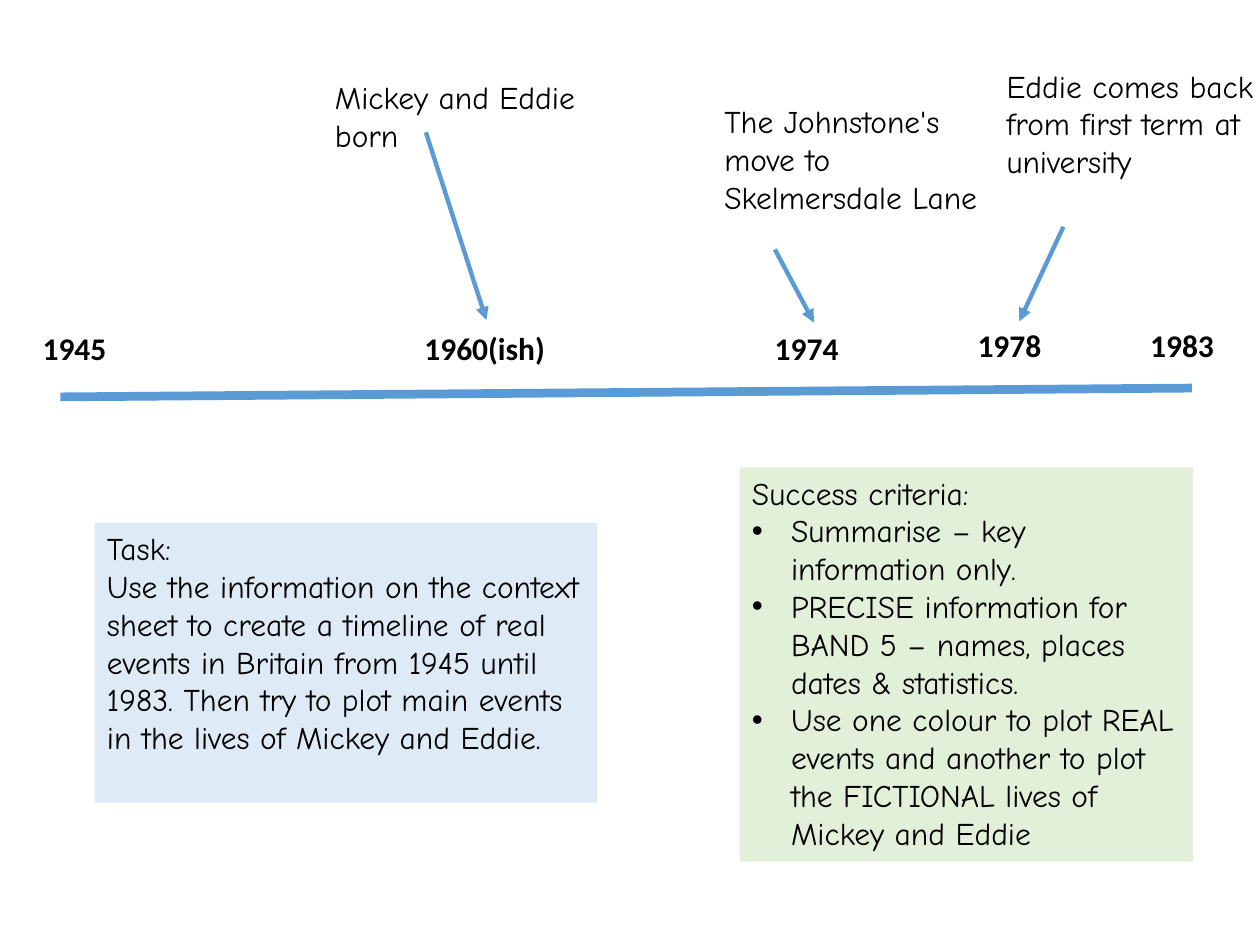
import pptx
import pptx.dml.color
import pptx.enum.shapes
import pptx.enum.text
import pptx.util
from lxml import etree
from pptx.oxml.ns import qn
from pptx.util import Inches

COLORS = {"line": "5B9BD5", "text": "000000", "task": "DEEBF7", "criteria": "E2F0D9"}
YEAR_FONT = "Calibri"
BODY_FONT = "Comic Neue"


def rgb(name):
    return pptx.dml.color.RGBColor.from_string(COLORS[name])


def add_bullet(paragraph):
    properties = paragraph._p.get_or_add_pPr()
    properties.set("marL", str(Inches(0.31)))
    properties.set("indent", str(-Inches(0.31)))
    etree.SubElement(properties, qn("a:buFont"), typeface="Arial")
    etree.SubElement(properties, qn("a:buChar"), char="•")


def write_text(shape, lines, font_name, bold=False, bullets_from=None):
    """Fill a shape with left-aligned lines; bullets start at bullets_from."""
    frame = shape.text_frame
    frame.word_wrap = True
    frame.vertical_anchor = pptx.enum.text.MSO_ANCHOR.TOP
    for index, line in enumerate(lines):
        paragraph = frame.paragraphs[0] if index == 0 else frame.add_paragraph()
        paragraph.text = line
        paragraph.alignment = pptx.enum.text.PP_ALIGN.LEFT
        if bullets_from is not None and index >= bullets_from:
            add_bullet(paragraph)
        paragraph.font.name = font_name
        paragraph.font.size = pptx.util.Pt(18)
        paragraph.font.bold = bold
        paragraph.font.color.rgb = rgb("text")


def add_line(slide, start, end, width, arrow=False):
    points = [Inches(value) for value in (*start, *end)]
    connector = slide.shapes.add_connector(
        pptx.enum.shapes.MSO_CONNECTOR.STRAIGHT, *points)
    connector.line.color.rgb = rgb("line")
    connector.line.width = pptx.util.Pt(width)
    if arrow:
        etree.SubElement(connector.line._get_or_add_ln(), qn("a:tailEnd"), type="triangle")
    etree.SubElement(connector._element.spPr, qn("a:effectLst"))


def add_label(slide, box, text, font_name, bold=False):
    label = slide.shapes.add_textbox(*[Inches(value) for value in box])
    write_text(label, [text], font_name, bold)


def add_timeline(slide, box, years):
    """Axis along the bottom of the box, with year labels above it."""
    left, top, width, height = box
    add_line(slide, (left, top + height), (left + width, top + height - 0.07), 5)
    for text, x, y, label_width in years:
        add_label(slide, (left + x, top + y, label_width, 0.4), text, YEAR_FONT, True)


def add_event(slide, box, text, arrow_start, arrow_end):
    """Event note, with an arrow placed relative to the note's corner."""
    left, top = box[:2]
    add_label(slide, box, text, BODY_FONT)
    add_line(slide, (left + arrow_start[0], top + arrow_start[1]),
             (left + arrow_end[0], top + arrow_end[1]), 2.5, arrow=True)


def add_panel(slide, box, fill, lines, bullets_from=None):
    panel = slide.shapes.add_shape(
        pptx.enum.shapes.MSO_SHAPE.RECTANGLE, *[Inches(value) for value in box])
    panel.shadow.inherit = False
    panel.fill.solid()
    panel.fill.fore_color.rgb = rgb(fill)
    panel.line.fill.background()
    write_text(panel, lines, BODY_FONT, bullets_from=bullets_from)


def main():
    presentation = pptx.Presentation()
    presentation.slide_width = Inches(10)
    presentation.slide_height = Inches(7.5)
    slide = presentation.slides.add_slide(presentation.slide_layouts[6])

    # Timeline: year, offset from the box, label width
    add_timeline(slide, (0.48, 2.54, 8.98, 0.61), [
        ("1945", -0.24, 0.02, 0.86),
        ("1960(ish)", 2.79, 0.02, 1.19),
        ("1974", 5.57, 0.02, 1.19),
        ("1978", 7.18, 0, 1.19),
        ("1983", 8.55, 0, 0.86),
    ])

    # Events in the story
    add_event(slide, (2.56, 0.57, 2.42, 0.71), "Mickey and Eddie born",
              (0.82, 0.48), (1.3, 1.97))
    add_event(slide, (5.65, 0.76, 2.24, 1.31), "The Johnstone's move to Skelmersdale Lane",
              (0.5, 1.22), (0.81, 1.8))
    add_event(slide, (7.89, 0.48, 2.24, 1.31), "Eddie comes back from first term at university",
              (0.55, 1.32), (0.2, 2.07))

    # Task and success criteria
    add_panel(slide, (0.75, 4.15, 3.99, 2.22), "task", [
        "Task:",
        "Use the information on the context sheet to create a timeline of real events in "
        "Britain from 1945 until 1983. Then try to plot main events in the lives of "
        "Mickey and Eddie.",
    ])
    add_panel(slide, (5.87, 3.71, 3.6, 3.13), "criteria", [
        "Success criteria:",
        "Summarise – key information only.",
        "PRECISE information for BAND 5 – names, places dates & statistics.",
        "Use one colour to plot REAL events and another to plot the FICTIONAL lives of "
        "Mickey and Eddie",
    ], bullets_from=1)

    presentation.save("out.pptx")


if __name__ == "__main__":
    main()
